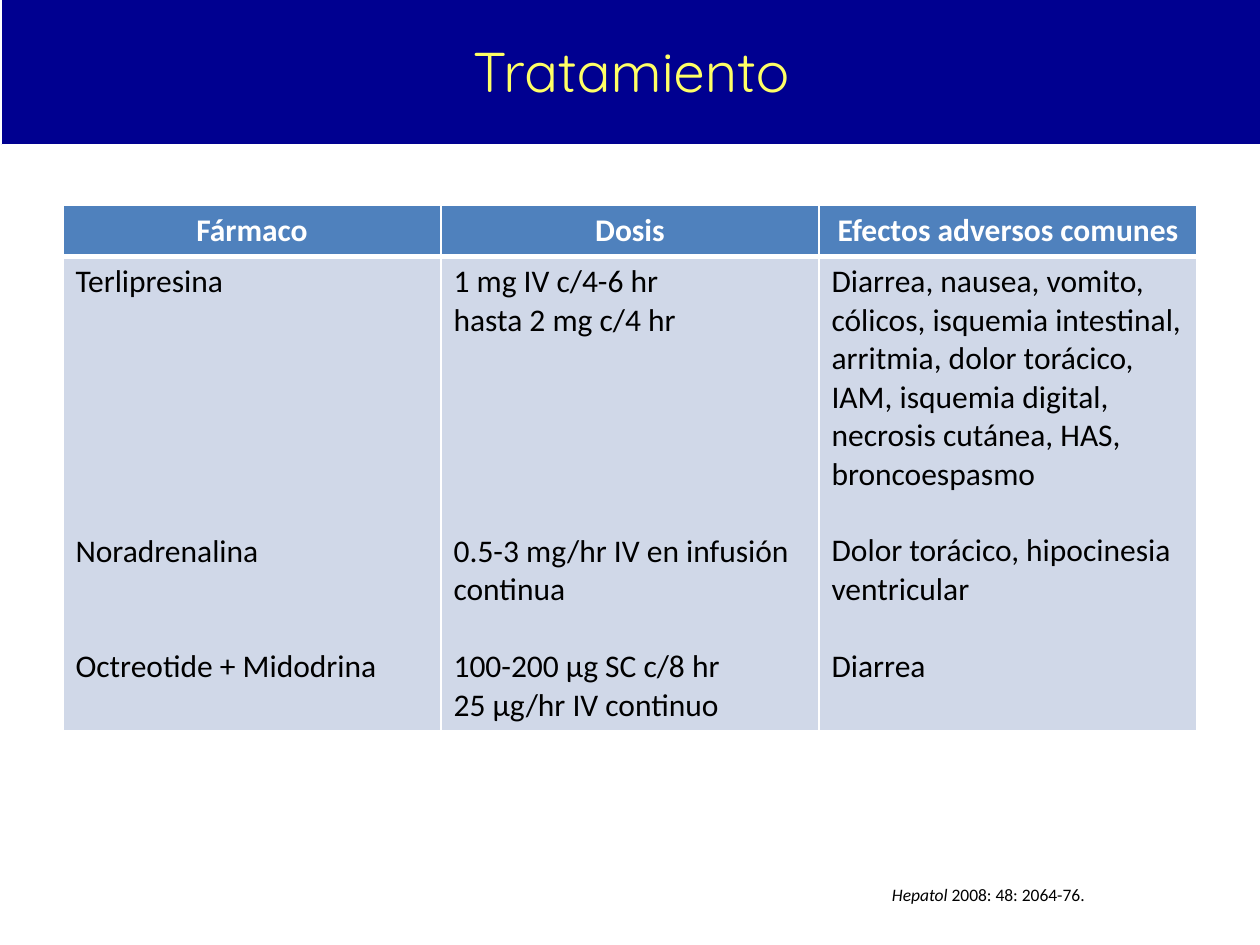
import lxml.etree
import pptx
import pptx.dml.color
import pptx.enum.shapes
import pptx.enum.text
import pptx.oxml.ns
import pptx.util

COLORS = {
    "band": "000090",
    "title": "FFFF66",
    "header": "4F81BD",
    "body": "D0D8E8",
    "white": "FFFFFF",
    "black": "000000",
}
LINE_HEIGHT = 22

presentation = pptx.Presentation()
presentation.slide_width = pptx.util.Inches(10)
presentation.slide_height = pptx.util.Inches(7.5)
slide = presentation.slides.add_slide(presentation.slide_layouts[6])


def add_run(paragraph, text, size, color, font="Calibri", bold=False, italic=False):
    run = paragraph.add_run()
    run.text = text
    run.font.name = font
    run.font.size = pptx.util.Pt(size)
    run.font.bold = bold
    run.font.italic = italic
    run.font.color.rgb = pptx.dml.color.RGBColor.from_string(COLORS[color])


def style_cell(cell, fill, bottom_width):
    cell.fill.solid()
    cell.fill.fore_color.rgb = pptx.dml.color.RGBColor.from_string(COLORS[fill])
    properties = cell._tc.get_or_add_tcPr()
    widths = {"lnL": 1, "lnR": 1, "lnT": 1, "lnB": bottom_width}
    for position, (side, width) in enumerate(widths.items()):
        border = lxml.etree.Element(pptx.oxml.ns.qn("a:" + side), w=str(pptx.util.Pt(width)))
        solid = lxml.etree.SubElement(border, pptx.oxml.ns.qn("a:solidFill"))
        lxml.etree.SubElement(solid, pptx.oxml.ns.qn("a:srgbClr"), val=COLORS["white"])
        properties.insert(position, border)


columns = [
    ("Fármaco", [
        (0, "Terlipresina"),
        (6, "Noradrenalina"),
        (2, "Octreotide + Midodrina"),
    ]),
    ("Dosis", [
        (0, "1 mg IV c/4-6 hr"),
        (0, "hasta 2 mg c/4 hr"),
        (5, "0.5-3 mg/hr IV en infusión continua"),
        (1, "100-200 μg SC c/8 hr"),
        (0, "25 μg/hr IV continuo"),
    ]),
    ("Efectos adversos comunes", [
        (0, "Diarrea, nausea, vomito, cólicos, isquemia intestinal, arritmia, "
            "dolor torácico, IAM, isquemia digital, necrosis cutánea, HAS, broncoespasmo"),
        (1, "Dolor torácico, hipocinesia ventricular"),
        (1, "Diarrea"),
    ]),
]

margin = presentation.slide_width // 20
table = slide.shapes.add_table(
    2, len(columns), margin, pptx.util.Inches(1.63),
    presentation.slide_width - 2 * margin, pptx.util.Inches(4.1),
).table
table.rows[0].height = pptx.util.Inches(0.39)
table.rows[1].height = pptx.util.Inches(3.71)

for index, (heading, entries) in enumerate(columns):
    header_cell = table.cell(0, index)
    style_cell(header_cell, "header", 3)
    paragraph = header_cell.text_frame.paragraphs[0]
    paragraph.alignment = pptx.enum.text.PP_ALIGN.CENTER
    add_run(paragraph, heading, 18, "white", bold=True)

    body_cell = table.cell(1, index)
    style_cell(body_cell, "body", 1)
    for number, (gap_lines, text) in enumerate(entries):
        frame = body_cell.text_frame
        paragraph = frame.add_paragraph() if number else frame.paragraphs[0]
        paragraph.space_before = pptx.util.Pt(gap_lines * LINE_HEIGHT)
        add_run(paragraph, text, 18, "black")

band = slide.shapes.add_shape(
    pptx.enum.shapes.MSO_SHAPE.RECTANGLE,
    pptx.util.Inches(0.01), pptx.util.Inches(-0.03),
    presentation.slide_width, pptx.util.Inches(1.18),
)
band.shadow.inherit = False
band.fill.solid()
band.fill.fore_color.rgb = pptx.dml.color.RGBColor.from_string(COLORS["band"])
band.line.color.rgb = pptx.dml.color.RGBColor.from_string(COLORS["white"])
band.line.width = pptx.util.Pt(0.75)
band.text_frame.vertical_anchor = pptx.enum.text.MSO_ANCHOR.MIDDLE
paragraph = band.text_frame.paragraphs[0]
paragraph.alignment = pptx.enum.text.PP_ALIGN.CENTER
add_run(paragraph, "Tratamiento", 32, "title", font="Quicksand")

citation = slide.shapes.add_textbox(
    pptx.util.Inches(6.95), pptx.util.Inches(6.97),
    pptx.util.Inches(1.83), pptx.util.Inches(0.27),
)
citation.text_frame.word_wrap = False
citation.text_frame.auto_size = pptx.enum.text.MSO_AUTO_SIZE.SHAPE_TO_FIT_TEXT
paragraph = citation.text_frame.paragraphs[0]
add_run(paragraph, " Hepatol ", 10, "black", italic=True)
add_run(paragraph, "2008: 48: 2064-76.", 10, "black")

presentation.save("out.pptx")
